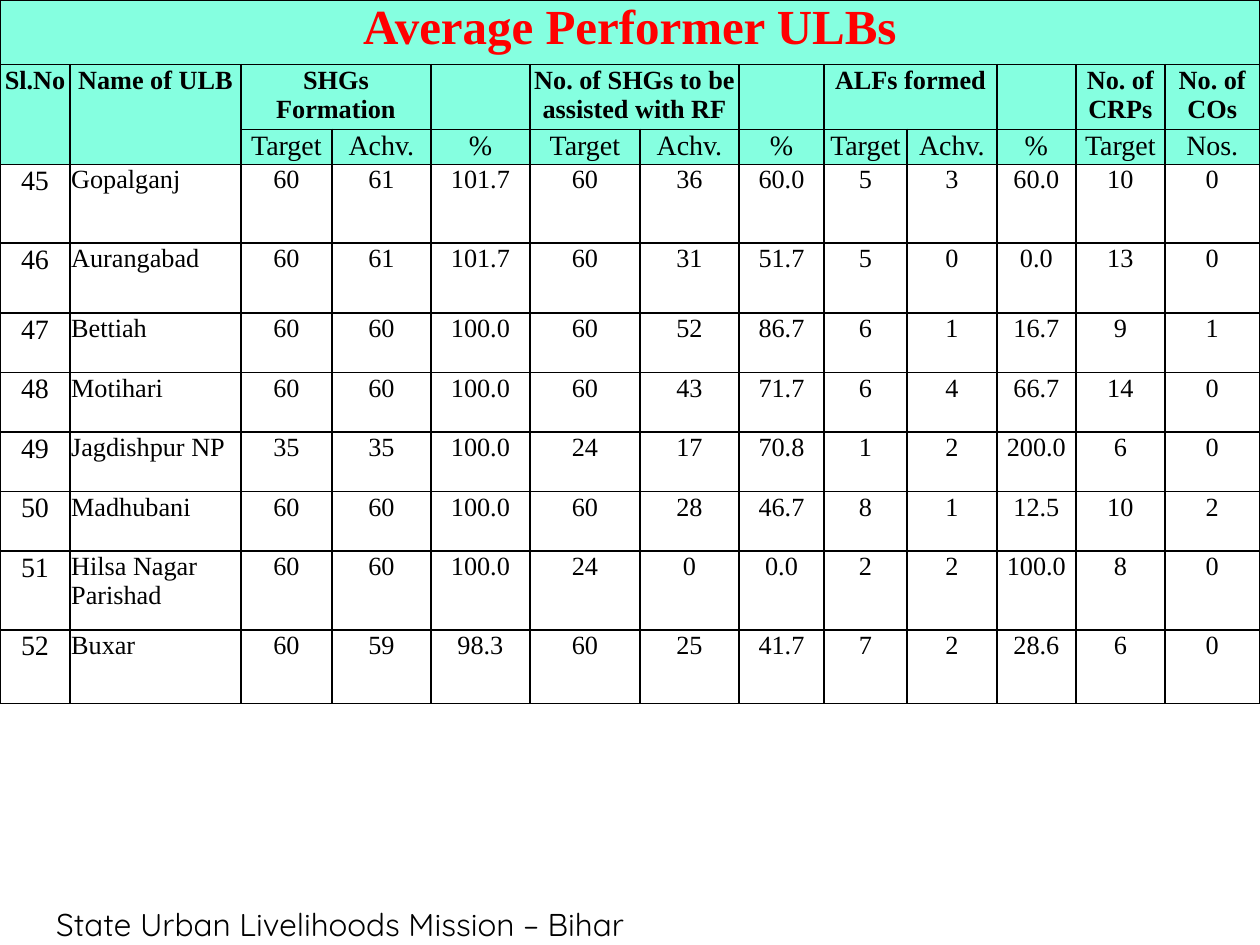
from pptx import Presentation
from pptx.dml.color import RGBColor
from pptx.enum.text import MSO_ANCHOR, PP_ALIGN
from pptx.oxml import parse_xml
from pptx.oxml.ns import nsdecls
from pptx.util import Pt

MINT = RGBColor(0x85, 0xFF, 0xE0)
RED = RGBColor(0xFF, 0x00, 0x00)
BLACK = RGBColor(0x00, 0x00, 0x00)
SERIF = "Times New Roman"

COLS = [40, 97.7, 52, 56.6, 56.6, 62.9, 56.6, 48.6, 47.4, 51.4, 45.1, 50.9, 54.2]
ROWS = [37, 37, 20, 45, 40, 34, 34, 34, 34, 45, 42]
HEADS = 3  # rows above the data

# Row, column, last row, last column of each merged cell
SPANS = [(0, 0, 0, 12), (1, 0, 2, 0), (1, 1, 2, 1),
         (1, 2, 1, 3), (1, 5, 1, 6), (1, 8, 1, 9)]

TEXT = [
    ["Average Performer ULBs"] + [""] * 12,
    ["Sl.No", "Name of ULB", "SHGs Formation", "", "",
     "No. of SHGs to be assisted with RF", "", "", "ALFs formed", "", "",
     "No. of CRPs", "No. of COs"],
    ["", ""] + ["Target", "Achv.", "%"] * 3 + ["Target", "Nos."],
    ["45", "Gopalganj", "60", "61", "101.7", "60", "36", "60.0", "5", "3", "60.0", "10", "0"],
    ["46", "Aurangabad", "60", "61", "101.7", "60", "31", "51.7", "5", "0", "0.0", "13", "0"],
    ["47", "Bettiah", "60", "60", "100.0", "60", "52", "86.7", "6", "1", "16.7", "9", "1"],
    ["48", "Motihari", "60", "60", "100.0", "60", "43", "71.7", "6", "4", "66.7", "14", "0"],
    ["49", "Jagdishpur NP", "35", "35", "100.0", "24", "17", "70.8", "1", "2", "200.0", "6", "0"],
    ["50", "Madhubani", "60", "60", "100.0", "60", "28", "46.7", "8", "1", "12.5", "10", "2"],
    ["51", "Hilsa Nagar Parishad", "60", "60", "100.0", "24", "0", "0.0", "2", "2", "100.0", "8", "0"],
    ["52", "Buxar", "60", "59", "98.3", "60", "25", "41.7", "7", "2", "28.6", "6", "0"],
]


def edge(cell):
    """Draw a black line on all four sides of a cell."""
    props = cell._tc.get_or_add_tcPr()
    for side in ("lnL", "lnR", "lnT", "lnB"):
        props.append(parse_xml(
            f'<a:{side} {nsdecls("a")} w="{Pt(1)}"><a:solidFill>'
            f'<a:srgbClr val="{BLACK}"/></a:solidFill></a:{side}>'))


def style(cell, row, col):
    """Format one cell by its place in the table."""
    cell.margin_left = cell.margin_right = cell.margin_top = Pt(0.7)
    cell.margin_bottom = 0
    cell.vertical_anchor = MSO_ANCHOR.TOP
    edge(cell)
    if row < HEADS:
        cell.fill.solid()
        cell.fill.fore_color.rgb = MINT
    else:
        cell.fill.background()

    para = cell.text_frame.paragraphs[0]
    name = row >= HEADS and col == 1
    para.alignment = PP_ALIGN.LEFT if name else PP_ALIGN.CENTER
    font = para.font
    if row == 0:
        size = 28
    elif row == 2 or (row >= HEADS and col == 0):
        size = 16
    else:
        size = 15
    font.size = Pt(size)
    font.name = SERIF
    font.bold = row < 2
    font.color.rgb = RED if row == 0 else BLACK


def grid(slide, left, top, width, height):
    """Place the performance table."""
    frame = slide.shapes.add_table(len(ROWS), len(COLS), left, top, width, height)
    table = frame.table
    table.first_row = table.horz_banding = False
    for col, size in zip(table.columns, COLS):
        col.width = Pt(size)
    for row, size in zip(table.rows, ROWS):
        row.height = Pt(size)

    # Words and look of each cell
    for r, line in enumerate(TEXT):
        for c, word in enumerate(line):
            cell = table.cell(r, c)
            cell.text_frame.text = word
            style(cell, r, c)

    # Merged headings
    for r, c, end, last in SPANS:
        table.cell(r, c).merge(table.cell(end, last))


def footer(slide, left, top, width, height):
    """Place the line at the foot of the slide."""
    frame = slide.shapes.add_textbox(left, top, width, height).text_frame
    frame.word_wrap = True
    frame.text = "State Urban Livelihoods Mission – Bihar"
    font = frame.paragraphs[0].runs[0].font
    font.size = Pt(18)
    font.name = "Quicksand"
    font.color.rgb = BLACK


def main():
    deck = Presentation()
    deck.slide_width, deck.slide_height = Pt(720), Pt(540)
    slide = deck.slides.add_slide(deck.slide_layouts[6])
    footer(slide, Pt(25), Pt(513.4), Pt(460), Pt(29))
    grid(slide, 0, 0, Pt(sum(COLS)), Pt(sum(ROWS)))
    deck.save("out.pptx")


if __name__ == "__main__":
    main()
